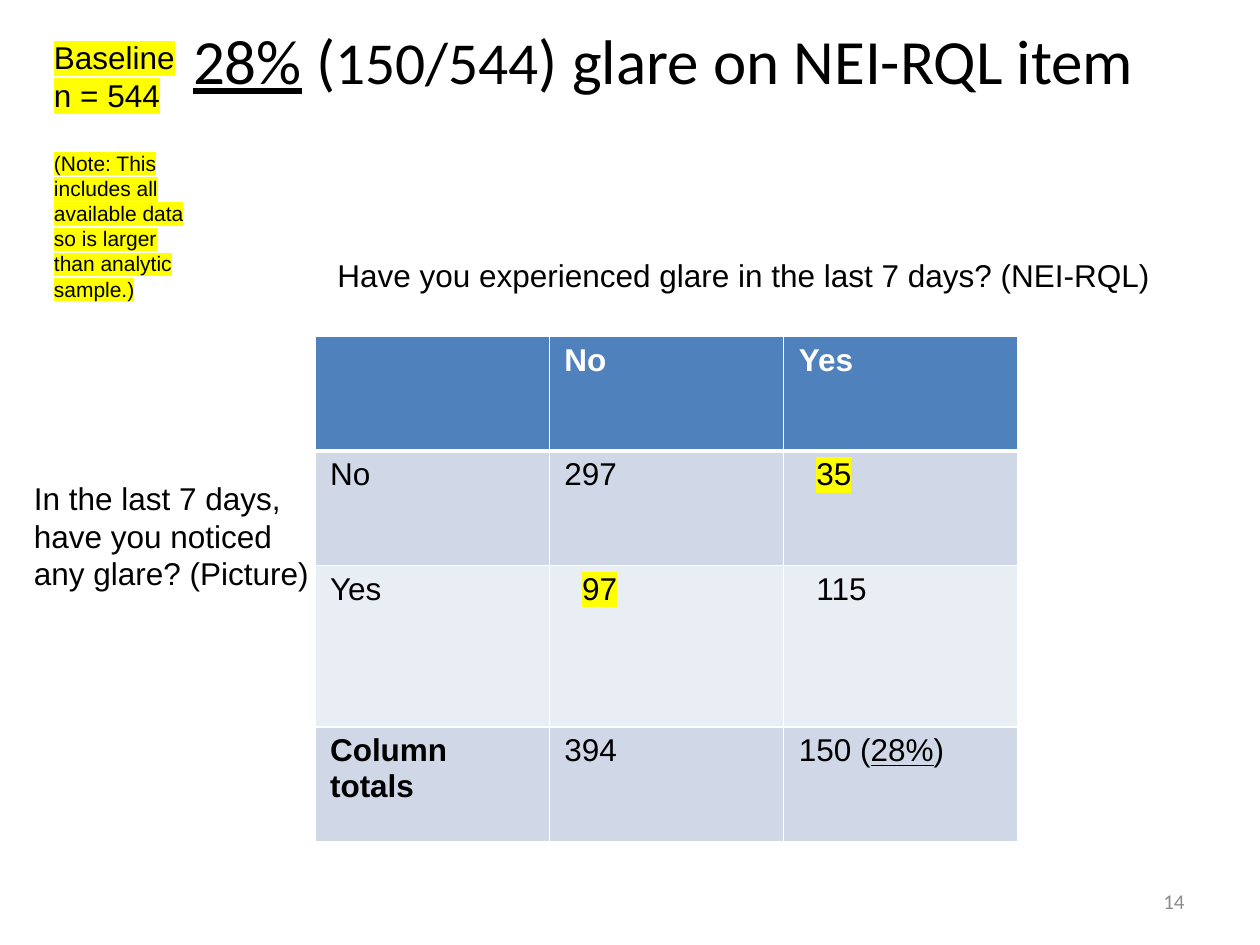
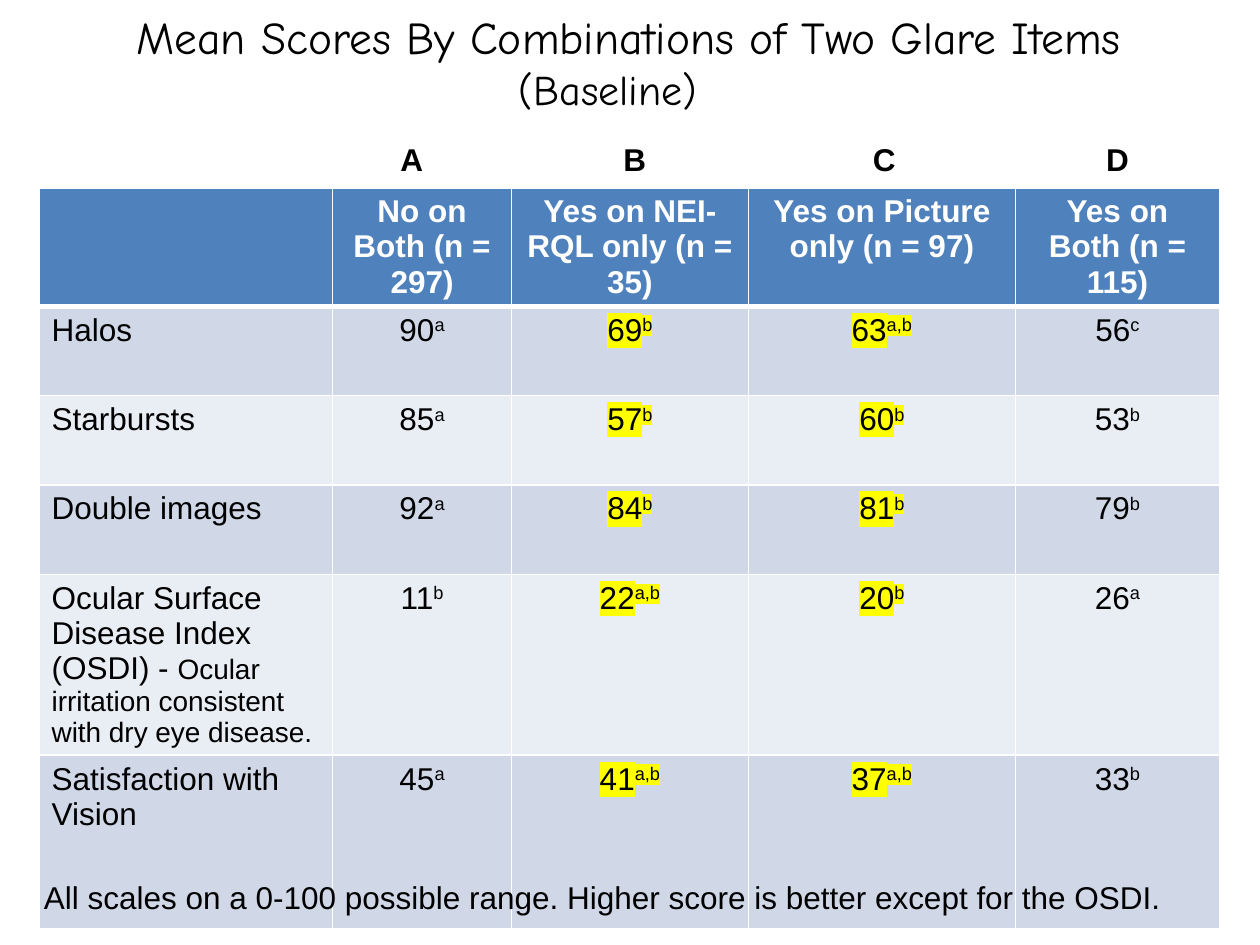
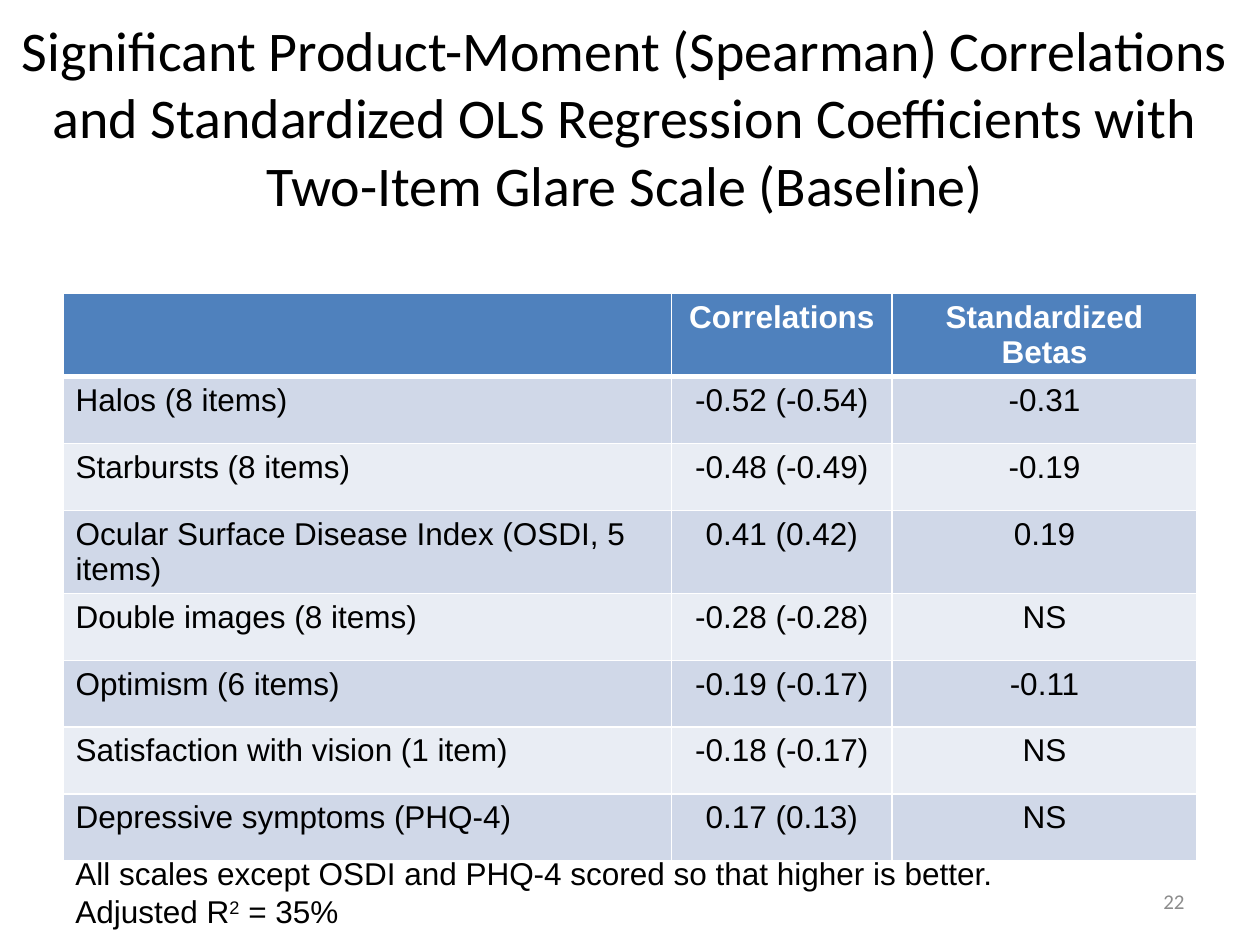
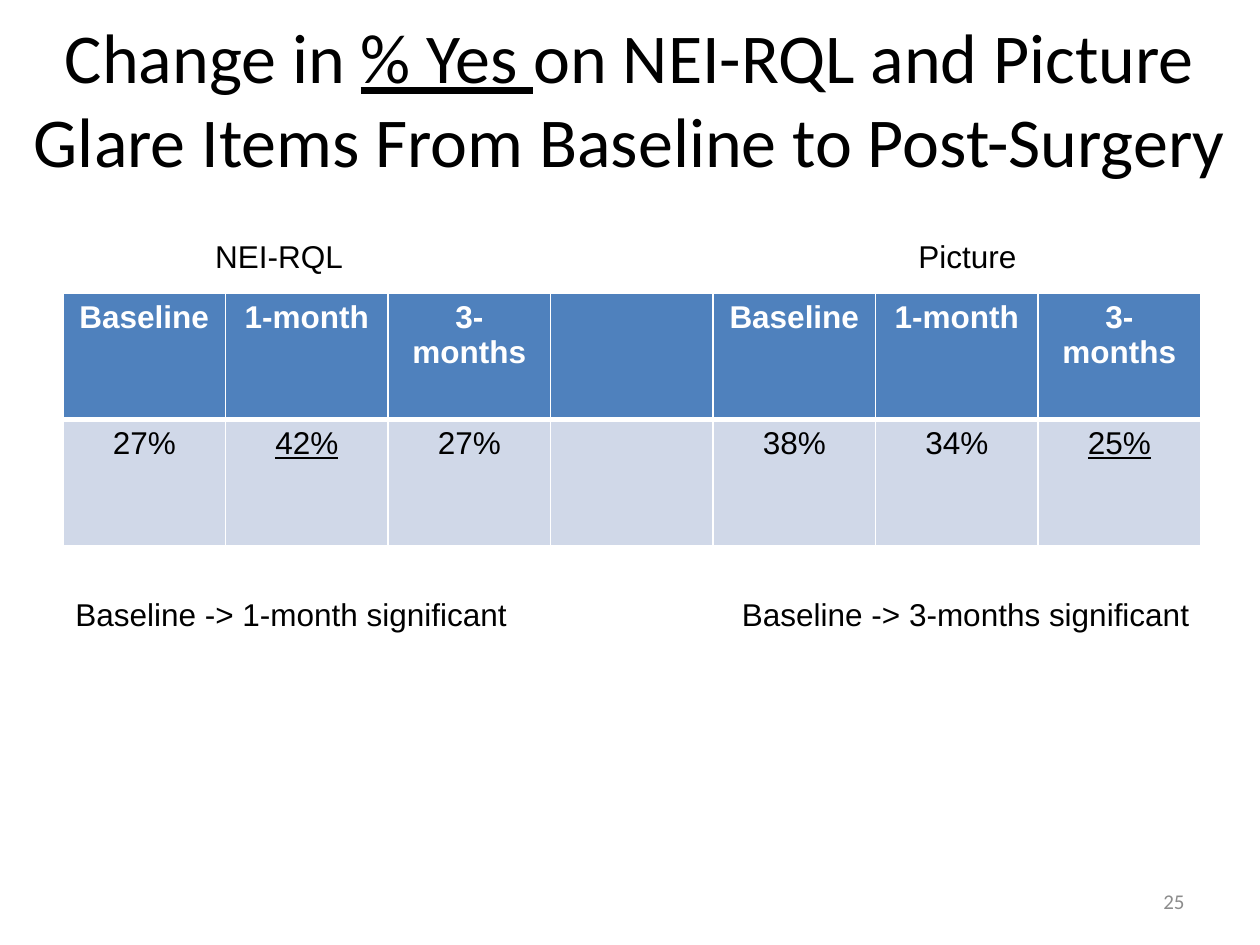
from dataclasses import dataclass
from typing import Optional, Sequence, Union

from lxml.etree import SubElement
from pptx import Presentation
from pptx.dml.color import RGBColor
from pptx.enum.text import MSO_ANCHOR, MSO_AUTO_SIZE, PP_ALIGN
from pptx.oxml.ns import qn
from pptx.util import Pt

EMU_PER_PX = 9144


@dataclass(frozen=True)
class Theme:
    text: str = "000000"
    inverse: str = "FFFFFF"
    header: str = "4F81BD"
    bands: tuple = ("D0D8E8", "E9EDF4")
    highlight: str = "FFFF00"
    muted: str = "8C8C8C"
    body_font: str = "Arial"
    title_font: str = "Calibri"
    casual_font: str = "Comic Neue"
    body_size: int = 18
    detail_size: int = 16
    small_size: int = 12
    grid_line: int = 1
    header_line: int = 3


THEME = Theme()


@dataclass(frozen=True)
class Piece:
    text: str
    size: Optional[int] = None
    bold: bool = False
    underline: bool = False
    highlight: bool = False
    raised: bool = False


@dataclass(frozen=True)
class Line:
    pieces: tuple
    space_before: int = 0
    right_indent: int = 0
    tabs: tuple = ()


@dataclass(frozen=True)
class Style:
    size: int = THEME.body_size
    font: str = THEME.body_font
    color: str = THEME.text
    align: PP_ALIGN = PP_ALIGN.LEFT
    bold: bool = False


@dataclass(frozen=True)
class Box:
    left: int
    top: int
    width: int
    height: int

    def emu(self) -> tuple:
        return tuple(px(value) for value in (self.left, self.top, self.width, self.height))


@dataclass(frozen=True)
class Cell:
    pieces: tuple
    indent: int = 0


@dataclass(frozen=True)
class Grid:
    box: Box
    columns: tuple
    row_heights: tuple
    rows: Sequence
    label_columns: int = 1
    side_margin: int = 10


Content = Union[str, Cell]
NUMBER_BOX = Box(717, 695, 233, 40)


def px(value: int) -> int:
    return value * EMU_PER_PX


def line(*pieces: Union[str, Piece], **options) -> Line:
    return Line(tuple(Piece(p) if isinstance(p, str) else p for p in pieces), **options)


def write_piece(paragraph, piece: Piece, style: Style) -> None:
    run = paragraph.add_run()
    run.text = piece.text
    font = run.font
    font.size = Pt(piece.size or style.size)
    font.bold = piece.bold or style.bold
    font.underline = piece.underline
    font.color.rgb = RGBColor.from_string(style.color)
    properties = run._r.get_or_add_rPr()
    if piece.highlight:
        highlight = SubElement(properties, qn("a:highlight"))
        SubElement(highlight, qn("a:srgbClr"), val=THEME.highlight)
    if piece.raised:
        properties.set("baseline", "30000")
    font.name = style.font


def write_lines(text_frame, lines: Sequence[Line], style: Style) -> None:
    for index, content in enumerate(lines):
        paragraph = text_frame.add_paragraph() if index else text_frame.paragraphs[0]
        paragraph.alignment = style.align
        if content.space_before:
            paragraph.space_before = Pt(content.space_before)
        if content.right_indent:
            paragraph._p.get_or_add_pPr().set("marR", str(px(content.right_indent)))
        if content.tabs:
            stops = SubElement(paragraph._p.get_or_add_pPr(), qn("a:tabLst"))
            for position in content.tabs:
                SubElement(stops, qn("a:tab"), pos=str(px(position)), algn="l")
        for piece in content.pieces:
            write_piece(paragraph, piece, style)


def add_text(slide, box: Box, *lines: Line, style: Style = Style()):
    shape = slide.shapes.add_textbox(*box.emu())
    text_frame = shape.text_frame
    text_frame.word_wrap = True
    text_frame.auto_size = MSO_AUTO_SIZE.SHAPE_TO_FIT_TEXT
    write_lines(text_frame, lines, style)
    return shape


def start_slide(presentation, number: int, box: Box, size: int, *lines: Line,
                font: str = THEME.title_font):
    slide = presentation.slides.add_slide(presentation.slide_layouts[5])
    title = slide.shapes.title
    title.left, title.top, title.width, title.height = box.emu()
    title.text_frame.word_wrap = True
    title.text_frame.auto_size = MSO_AUTO_SIZE.NONE
    title.text_frame.vertical_anchor = MSO_ANCHOR.MIDDLE
    write_lines(title.text_frame, lines, Style(size, font, align=PP_ALIGN.CENTER))
    number_style = Style(THEME.small_size, THEME.title_font, THEME.muted, PP_ALIGN.RIGHT)
    number_shape = add_text(slide, NUMBER_BOX, line(str(number)), style=number_style)
    number_shape.text_frame.auto_size = MSO_AUTO_SIZE.NONE
    number_shape.text_frame.vertical_anchor = MSO_ANCHOR.MIDDLE
    return slide


def set_borders(cell, is_header: bool, is_below_header: bool) -> None:
    properties = cell._tc.get_or_add_tcPr()
    widths = {
        "a:lnL": THEME.grid_line,
        "a:lnR": THEME.grid_line,
        "a:lnT": THEME.header_line if is_below_header else THEME.grid_line,
        "a:lnB": THEME.header_line if is_header else THEME.grid_line,
    }
    for tag, width in widths.items():
        border = SubElement(properties, qn(tag), w=str(Pt(width)))
        fill = SubElement(border, qn("a:solidFill"))
        SubElement(fill, qn("a:srgbClr"), val=THEME.inverse)


def fill_cell(cell, content: Content, row: int, column: int, grid: Grid) -> None:
    is_header = row == 0
    set_borders(cell, is_header, row == 1)
    cell.fill.solid()
    color = THEME.header if is_header else THEME.bands[(row - 1) % 2]
    cell.fill.fore_color.rgb = RGBColor.from_string(color)
    entry = Cell((Piece(content),)) if isinstance(content, str) else content
    cell.margin_left = px(grid.side_margin + entry.indent)
    cell.margin_right = px(grid.side_margin)
    if content:
        style = Style(
            color=THEME.inverse if is_header else THEME.text,
            align=PP_ALIGN.LEFT if column < grid.label_columns else PP_ALIGN.CENTER,
            bold=is_header,
        )
        write_lines(cell.text_frame, [Line(entry.pieces)], style)


def add_grid(slide, grid: Grid) -> None:
    frame = slide.shapes.add_table(len(grid.rows), len(grid.columns), *grid.box.emu())
    table = frame.table
    table.horz_banding = False
    for column, width in zip(table.columns, grid.columns):
        column.width = px(width)
    for row, height in zip(table.rows, grid.row_heights):
        row.height = px(height)
    for row_index, contents in enumerate(grid.rows):
        for column_index, content in enumerate(contents):
            fill_cell(table.cell(row_index, column_index), content, row_index, column_index, grid)


def score_row(label: Content, *scores: str) -> list:
    row = [label]
    for index, score in enumerate(scores):
        value, group = score.split()
        marked = index in (1, 2)
        row.append(Cell((Piece(value, highlight=marked),
                         Piece(group, highlight=marked, raised=True))))
    return row


def build_cross_table(presentation) -> None:
    slide = start_slide(
        presentation, 14, Box(17, 8, 978, 125), 36,
        line(Piece("28%", underline=True), " (", Piece("150/544", 34), ") glare on NEI-RQL item"))
    title_frame = slide.shapes.title.text_frame
    title_frame.vertical_anchor = MSO_ANCHOR.TOP
    title_frame.margin_left = px(51)
    title_frame.margin_top = px(9)
    add_grid(slide, Grid(
        Box(250, 267, 558, 400), (186,) * 3, (91, 91, 128, 91),
        [["", "No", "Yes"],
         ["No", "297", Cell((Piece("35", highlight=True),), 14)],
         ["Yes", Cell((Piece("97", highlight=True),), 14), Cell((Piece("115"),), 14)],
         [Cell((Piece("Column totals", bold=True),)), "394",
          Cell((Piece("150 ("), Piece("28%", underline=True), Piece(")")))]],
        label_columns=3, side_margin=12))
    add_text(slide, Box(258, 198, 683, 40),
             line("Have you experienced glare in the last 7 days? (NEI-RQL)"))
    add_text(slide, Box(17, 375, 242, 101),
             line("In the last 7 days, have you noticed any glare? (Picture)"))
    note = "(Note: This includes all available data so is larger than analytic sample.)"
    add_text(slide, Box(33, 25, 125, 252),
             line(Piece("Baseline", highlight=True)),
             line(Piece("n = 544", highlight=True)),
             line(Piece(note, THEME.small_size, highlight=True), space_before=21))


def build_mean_scores(presentation) -> None:
    slide = start_slide(
        presentation, 21, Box(12, -21, 975, 140), 26,
        line("Mean Scores By Combinations of Two Glare Items"),
        line(Piece("(Baseline)", 24), right_indent=34),
        font=THEME.casual_font)
    surface_index = Cell((
        Piece("Ocular Surface Disease Index (OSDI) - "),
        Piece("Ocular irritation consistent with dry eye disease.", THEME.detail_size)))
    add_grid(slide, Grid(
        Box(31, 149, 937, 493), (233, 142, 188, 212, 162), (71,) * 5 + (138,),
        [["", "No on Both (n = 297)", "Yes on NEI-RQL only (n = 35)",
          "Yes on Picture only (n = 97)", "Yes on Both (n = 115)"],
         score_row("Halos", "90 a", "69 b", "63 a,b", "56 c"),
         score_row("Starbursts", "85 a", "57 b", "60 b", "53 b"),
         score_row("Double images", "92 a", "84 b", "81 b", "79 b"),
         score_row(surface_index, "11 b", "22 a,b", "20 b", "26 a"),
         score_row("Satisfaction with Vision", "45 a", "41 a,b", "37 a,b", "33 b")]))
    add_text(slide, Box(25, 692, 967, 40),
             line("All scales on a 0-100 possible range. "
                  "Higher score is better except for the OSDI."))
    add_text(slide, Box(308, 106, 650, 40), line("A\tB\tC\tD", tabs=(177, 375, 560)),
             style=Style(bold=True))


def build_correlations(presentation) -> None:
    slide = start_slide(
        presentation, 22, Box(0, 30, 992, 125), 32,
        line("Significant Product-Moment (Spearman) Correlations and Standardized OLS "
             "Regression Coefficients with Two-Item Glare Scale (Baseline)"))
    add_grid(slide, Grid(
        Box(50, 233, 900, 425), (483, 175, 242), (53,) * 8,
        [["", "Correlations", "Standardized Betas"],
         ["Halos (8 items)", "-0.52 (-0.54)", "-0.31"],
         ["Starbursts (8 items)", "-0.48 (-0.49)", "-0.19"],
         ["Ocular Surface Disease Index (OSDI, 5 items)", "0.41 (0.42)", "0.19"],
         ["Double images (8 items)", "-0.28 (-0.28)", "NS"],
         ["Optimism (6 items)", "-0.19 (-0.17)", "-0.11"],
         ["Satisfaction with vision (1 item)", "-0.18 (-0.17)", "NS"],
         ["Depressive symptoms (PHQ-4)", "0.17 (0.13)", "NS"]]))
    add_text(slide, Box(50, 673, 858, 71),
             line("All scales except OSDI and PHQ-4 scored so that higher is better."),
             line("Adjusted R", Piece("2", raised=True), " = 35%"))


def build_change(presentation) -> None:
    slide = start_slide(
        presentation, 25, Box(12, 15, 975, 125), 40,
        line("Change in ", Piece("% Yes ", underline=True),
             "on NEI-RQL and Picture Glare Items From Baseline to Post-Surgery"))
    add_text(slide, Box(50, 183, 899, 40), line("\tNEI-RQL\tPicture", tabs=(111, 669)))
    visits = ["Baseline", "1-month", "3-months"]
    add_grid(slide, Grid(
        Box(50, 233, 900, 200), (129,) * 7, (100, 100),
        [visits + [""] + visits,
         ["27%", Cell((Piece("42%", underline=True),)), "27%", "",
          "38%", "34%", Cell((Piece("25%", underline=True),))]],
        label_columns=0))
    add_text(slide, Box(50, 467, 375, 40), line("Baseline -> 1-month significant"))
    add_text(slide, Box(579, 467, 379, 40), line("Baseline -> 3-months significant"))


def main() -> None:
    presentation = Presentation()
    presentation.slide_width = px(1000)
    presentation.slide_height = px(750)
    for build in (build_cross_table, build_mean_scores, build_correlations, build_change):
        build(presentation)
    presentation.save("out.pptx")


if __name__ == "__main__":
    main()
